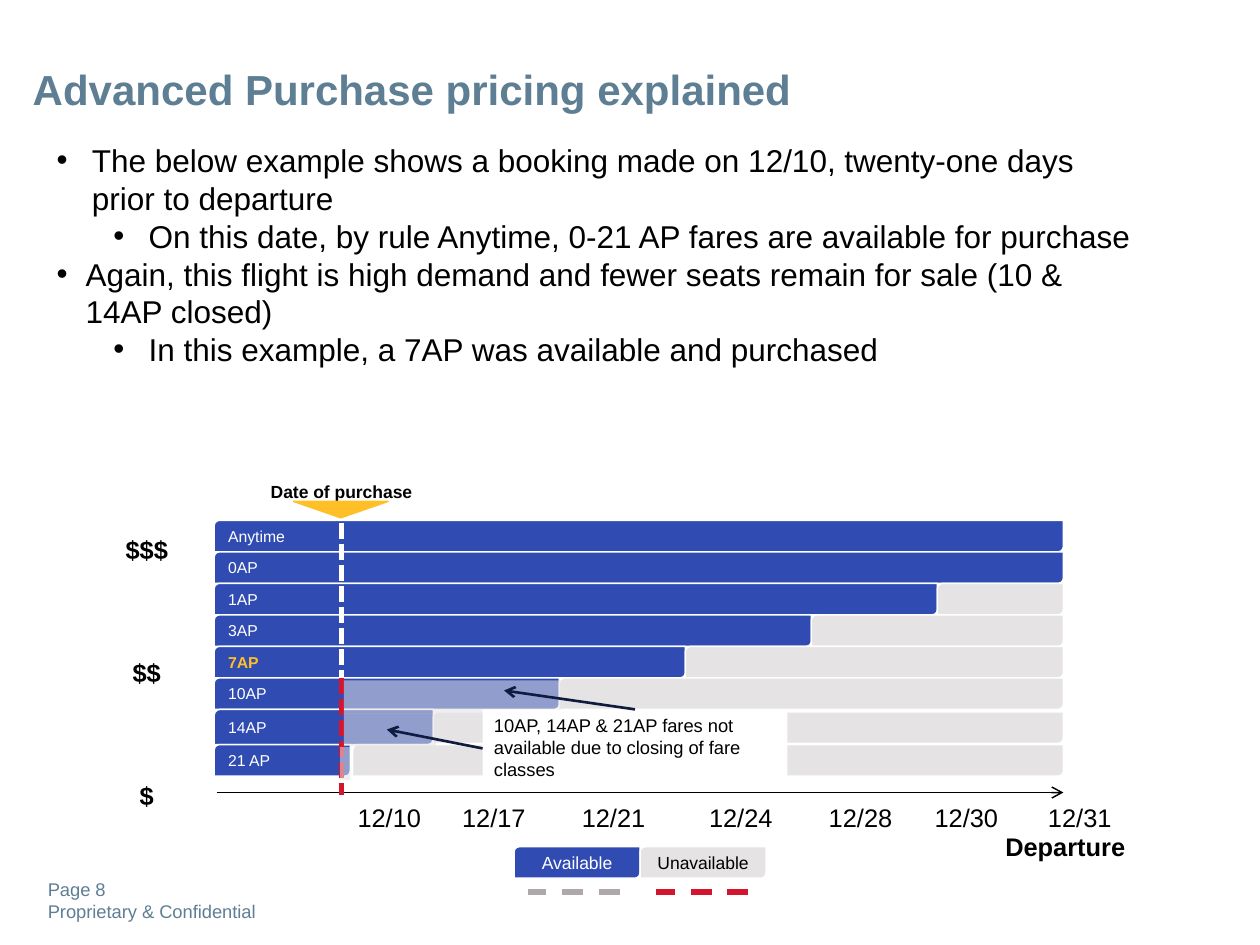
import pptx
import pptx.util
import pptx.dml.color
import pptx.enum.dml
import pptx.enum.shapes
import pptx.enum.text
import pptx.oxml.ns
import lxml.etree

Inches, Pt = pptx.util.Inches, pptx.util.Pt
RGBColor = pptx.dml.color.RGBColor
Shape = pptx.enum.shapes.MSO_SHAPE
Align = pptx.enum.text.PP_ALIGN
Anchor = pptx.enum.text.MSO_ANCHOR
Dash = pptx.enum.dml.MSO_LINE
qn = pptx.oxml.ns.qn

BLACK = RGBColor(0, 0, 0)
WHITE = RGBColor(0xFF, 0xFF, 0xFF)
SLATE = RGBColor(0x5E, 0x7E, 0x94)
BLUE = RGBColor(0x30, 0x4C, 0xB2)
GREY = RGBColor(0xE5, 0xE3, 0xE3)
DASH_GREY = RGBColor(0xAE, 0xA8, 0xA8)
GOLD = RGBColor(0xFF, 0xBF, 0x27)
RED = RGBColor(0xD5, 0x15, 0x2E)
NAVY = RGBColor(0x11, 0x1B, 0x40)

# Content
TITLE = "Advanced Purchase pricing explained"
BULLETS = [  # text, level, left margin
    ("The below example shows a booking made on 12/10, twenty-one days prior to departure", 0, 0.28),
    ("On this date, by rule Anytime, 0-21 AP fares are available for purchase", 1, 0.73),
    ("Again, this flight is high demand and fewer seats remain for sale (10 & 14AP closed)", 1, 0.23),
    ("In this example, a 7AP was available and purchased", 1, 0.73),
]
FARES = [  # label, width of the available part
    ("Anytime", 6.74), ("0AP", 6.74), ("1AP", 5.74), ("3AP", 4.74),
    ("7AP", 3.74), ("10AP", 2.74), ("14AP", 1.74), ("21 AP", 1.08),
]
PURCHASED = "7AP"
DATES = [("12/10", 3.09), ("12/17", 3.92), ("12/21", 4.87), ("12/24", 5.88),
         ("12/28", 6.83), ("12/30", 7.67), ("12/31", 8.57)]  # text, centre
PRICES = ["$$$", "$$", "$"]
CALLOUT = "10AP, 14AP & 21AP fares not available due to closing of fare classes"
LEGEND = [("Available", BLUE, WHITE, DASH_GREY, 4.92),
          ("Unavailable", GREY, BLACK, RED, 5.94)]  # last: right end of dash
FOOTER = ["Page 8", "Proprietary & Confidential"]

# Grid of the fare chart
LEFT, TOP, WIDTH, ROW = 1.7, 4.13, 6.74, 0.25
RIGHT = LEFT + WIDTH
EXTRA = 0.03  # the 14AP row is slightly taller
BUY_X = 2.71

deck = pptx.Presentation()
deck.slide_width, deck.slide_height = Inches(10), Inches(7.5)
page = deck.slides.add_slide(deck.slide_layouts[6])


def write(shape, lines, size, color, bold=False, align=Align.LEFT,
          inset=(0.1, 0.05), anchor=Anchor.TOP):
    frame = shape.text_frame
    frame.word_wrap = True
    frame.vertical_anchor = anchor
    frame.margin_left = frame.margin_right = Inches(inset[0])
    frame.margin_top = frame.margin_bottom = Inches(inset[1])
    frame.text = "\n".join(lines)
    for para in frame.paragraphs:
        para.alignment = align
        for span in para.runs:
            span.font.name = "Arial"
            span.font.size = Pt(size)
            span.font.bold = bold
            span.font.color.rgb = color
    return frame


def add_text(left, top, width, height, lines, size, color, **style):
    box = page.shapes.add_textbox(*map(Inches, (left, top, width, height)))
    return write(box, lines, size, color, **style)


def add_block(kind, left, top, width, height, fill, outline=None, alpha=None):
    block = page.shapes.add_shape(kind, *map(Inches, (left, top, width, height)))
    block.shadow.inherit = False
    block.fill.solid()
    block.fill.fore_color.rgb = fill
    if alpha:
        tint = block.fill._xPr.find(".//" + qn("a:srgbClr"))
        lxml.etree.SubElement(tint, qn("a:alpha"), val=str(alpha * 1000))
    if outline is None:
        block.line.fill.background()
    else:
        block.line.color.rgb = outline
        block.line.width = Pt(0.85)
    return block


def add_bar(left, top, width, fill, height=ROW):
    return add_block(Shape.ROUND_2_DIAG_RECTANGLE, left, top, width, height, fill, WHITE)


def add_line(start, end, color, width, dash=None, arrow=False):
    line = page.shapes.add_connector(pptx.enum.shapes.MSO_CONNECTOR.STRAIGHT,
                                     *map(Inches, start + end))
    line.line.color.rgb = color
    line.line.width = Pt(width)
    if dash:
        line.line.dash_style = dash
    if arrow:
        lxml.etree.SubElement(line.line._get_or_add_ln(), qn("a:tailEnd"), type="arrow")
    lxml.etree.SubElement(line._element.spPr, qn("a:effectLst"))


# Footer and title
add_text(0.38, 6.97, 1.9, 0.35, FOOTER, 10.5, SLATE, inset=(0, 0), anchor=Anchor.MIDDLE)
add_text(0.17, 0.46, 9.33, 0.51, [TITLE], 24, SLATE, bold=True, inset=(0.09, 0.04))

# Bullets
body = add_text(0.36, 1.08, 8.78, 2.12, [item[0] for item in BULLETS], 18, BLACK,
                inset=(0.09, 0.04))
for para, (_, level, margin) in zip(body.paragraphs, BULLETS):
    para.level = level
    props = para._p.get_or_add_pPr()
    props.set("marL", str(Inches(margin)))
    props.set("indent", str(Inches(-0.28)))
    lxml.etree.SubElement(props, qn("a:buFont"), typeface="Arial")
    lxml.etree.SubElement(props, qn("a:buChar"), char="•")

# Fare bars: available part, then the rest up to departure
for row, (label, width) in enumerate(FARES):
    tall = label == "14AP"
    top = TOP + row * ROW + (EXTRA if label == "21 AP" else 0)
    bar = add_bar(LEFT, top, width, BLUE, ROW + EXTRA * tall)
    bought = label == PURCHASED
    write(bar, [label], 9, GOLD if bought else WHITE, bold=bought, anchor=Anchor.MIDDLE)
    if width < WIDTH:
        start = LEFT + width + (0.02 if label == "21 AP" else 0)
        add_bar(start, top + 0.02 * tall, RIGHT - start, GREY)

# Time axis with dates on centred tab stops
add_line((LEFT + 0.02, 6.29), (RIGHT, 6.29), BLACK, 0.85, arrow=True)
dates_left = 2.6
dates = add_text(dates_left, 6.33, 6.5, 0.33, ["\t" + "\t".join(d[0] for d in DATES)],
                 14.5, BLACK, inset=(0, 0.04))
stops = lxml.etree.SubElement(dates.paragraphs[0]._p.get_or_add_pPr(), qn("a:tabLst"))
for _, center in DATES:
    lxml.etree.SubElement(stops, qn("a:tab"), pos=str(Inches(center - dates_left)), algn="ctr")
add_text(7.84, 6.55, 1.23, 0.35, ["Departure"], 14.5, BLACK, bold=True, align=Align.CENTER)

# Price scale
prices = add_text(0.83, 4.19, 0.67, 2.3, PRICES, 14.5, BLACK, bold=True, align=Align.CENTER)
for para in prices.paragraphs[1:]:
    para.space_before = Pt(53)

# Date of purchase marker
add_line((BUY_X, 4.15), (BUY_X, 5.38), WHITE, 3, Dash.SQUARE_DOT)
add_line((BUY_X, 5.38), (BUY_X, 6.31), RED, 3, Dash.SQUARE_DOT)
add_text(1.96, 3.77, 1.5, 0.27, ["Date of purchase"], 10, BLACK, bold=True, align=Align.CENTER)
add_block(Shape.FLOWCHART_MERGE, 2.33, 3.98, 0.75, 0.13, GOLD, GOLD)

# Legend
for column, (label, fill, ink, dash_color, dash_end) in enumerate(LEGEND):
    add_line((dash_end, 7.08), (dash_end - 0.73, 7.08), dash_color, 3, Dash.DASH)
    key = add_bar(4.08 + column, 6.72, 1, fill)
    write(key, [label], 10, ink, align=Align.CENTER, anchor=Anchor.MIDDLE)

# Closed fares: veils, callout and arrows
for left, top, width in [(2.73, 5.4, 1.73), (2.73, 5.66, 0.73), (2.7, 5.93, 0.08)]:
    add_block(Shape.RECTANGLE, left, top, width, 0.26, GREY, alpha=54)
note = add_block(Shape.RECTANGLE, 3.83, 5.63, 2.42, 0.62, WHITE)
write(note, [CALLOUT], 10.5, BLACK, inset=(0.09, 0.04))
add_line((5.04, 5.63), (4, 5.48), NAVY, 1.5, arrow=True)
add_line((3.83, 5.94), (3.07, 5.79), NAVY, 1.5, arrow=True)

deck.save("out.pptx")
